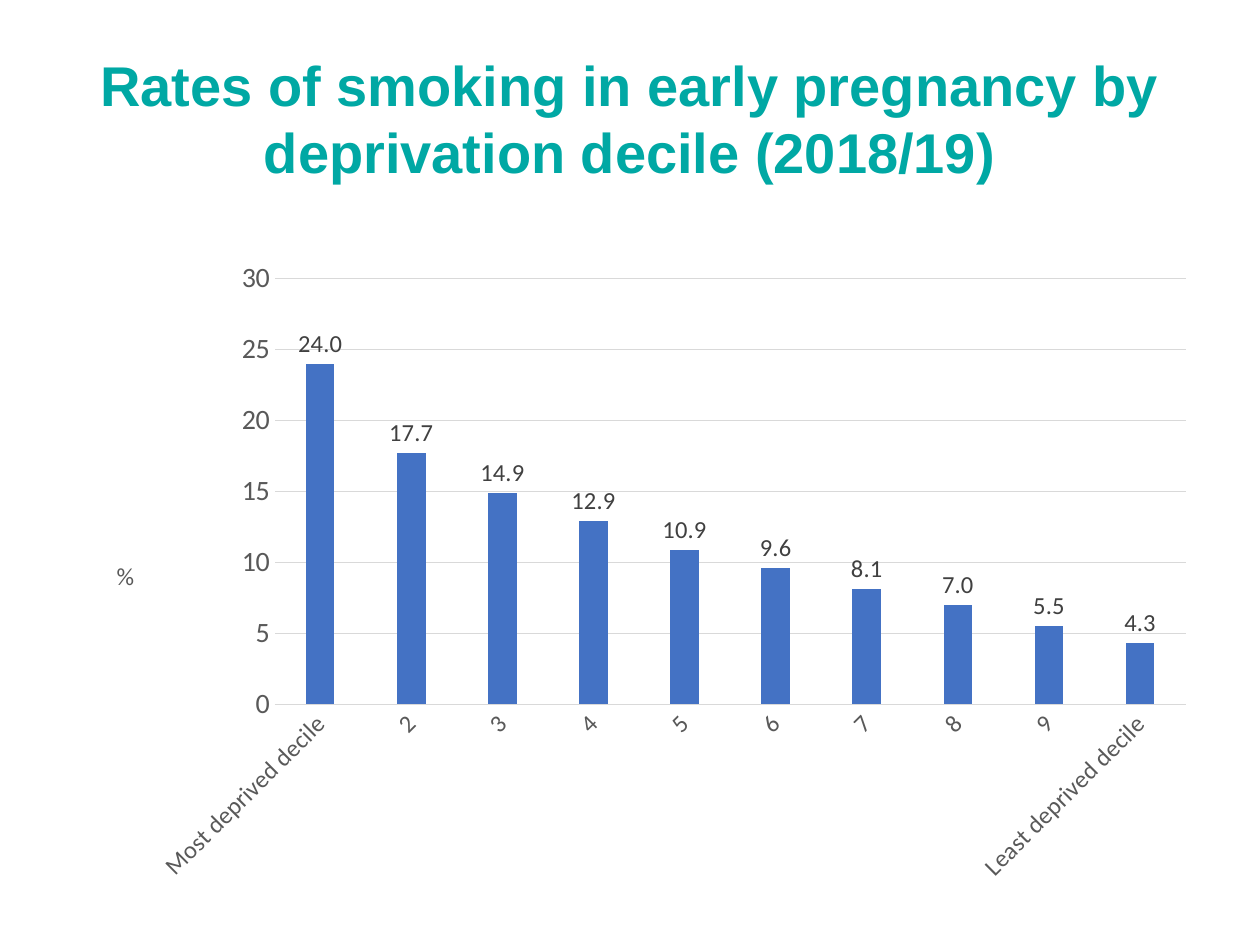
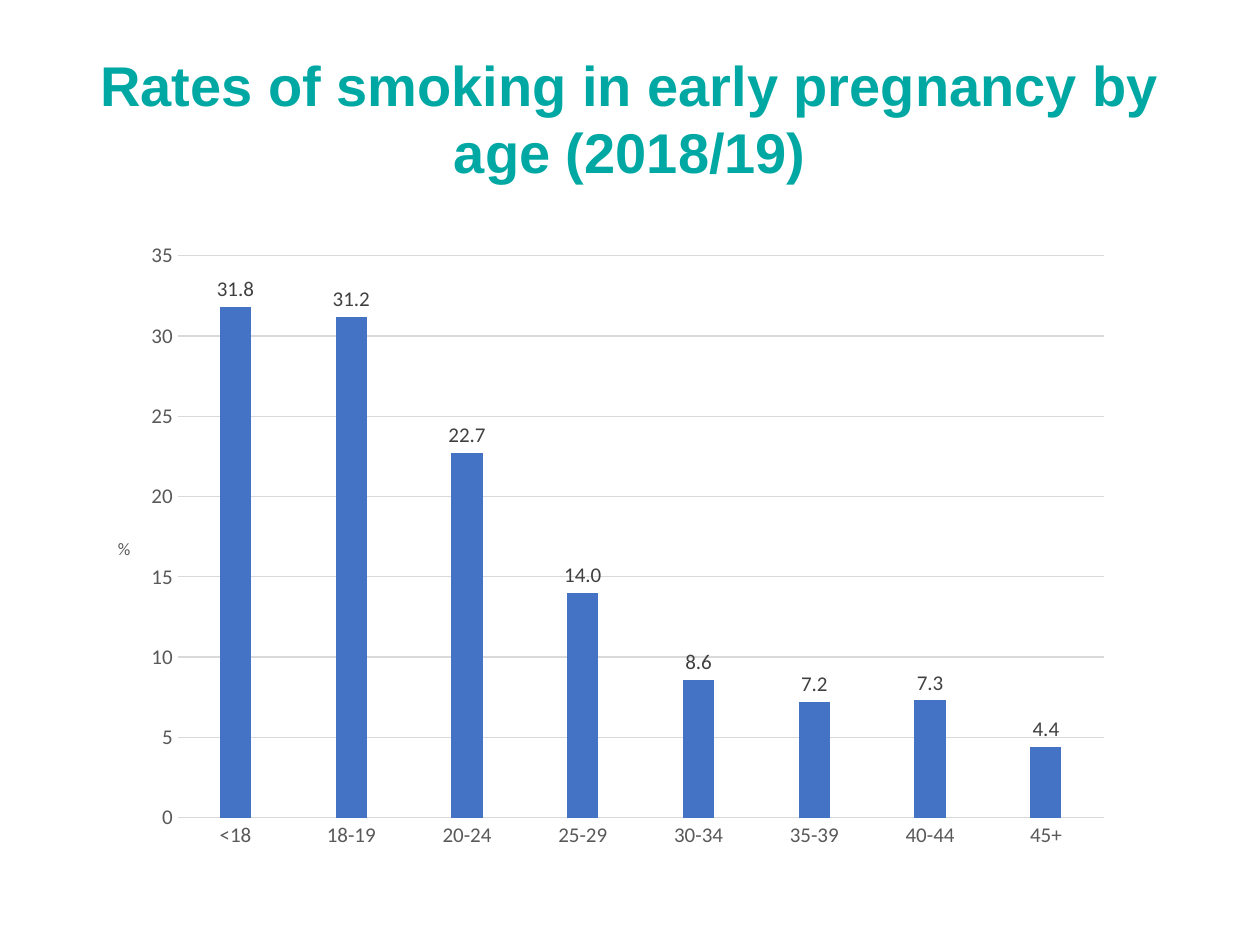
"""Build two slides showing smoking rates in early pregnancy by group."""
from lxml import etree
from pptx import Presentation
from pptx.chart.data import CategoryChartData
from pptx.dml.color import RGBColor
from pptx.enum.chart import XL_CHART_TYPE, XL_LABEL_POSITION, XL_TICK_MARK
from pptx.enum.text import MSO_ANCHOR, PP_ALIGN
from pptx.oxml.ns import qn
from pptx.util import Inches, Pt

COLUMN = XL_CHART_TYPE.COLUMN_CLUSTERED
OUTSIDE_END = XL_LABEL_POSITION.OUTSIDE_END
NO_TICK = XL_TICK_MARK.NONE
MIDDLE = MSO_ANCHOR.MIDDLE
CENTER = PP_ALIGN.CENTER

TEAL, BLUE = "00A8A4", "4472C4"
GRID, AXIS_TEXT, LABEL_TEXT, BLACK = "D9D9D9", "595959", "404040", "000000"
TITLE_FONT, CHART_FONT = "Arial", "Calibri"
TITLE_BOX = (0.49, 0.34, 9.02, 1.18)

SLIDES = [
    {
        "title": "Rates of smoking in early pregnancy by deprivation decile (2018/19)",
        "rates": [
            ("Most deprived decile", 24.0), ("2", 17.7), ("3", 14.9),
            ("4", 12.9), ("5", 10.9), ("6", 9.6), ("7", 8.1), ("8", 7.0),
            ("9", 5.5), ("Least deprived decile", 4.3),
        ],
        "chart_box": (0.69, 1.97, 8.89, 5.13),
        "plot_box": (2.18, 2.21, 7.23, 3.38),
        "unit_at": (0.89, 4.4),
        "category_size": 14, "value_size": 16, "label_size": 14, "unit_size": 14,
        "gap": 219, "maximum": 30, "category_angle": -45,
    },
    {
        "title": "Rates of smoking in early pregnancy by age (2018/19)",
        "rates": [
            ("<18", 31.8), ("18-19", 31.2), ("20-24", 22.7), ("25-29", 14.0),
            ("30-34", 8.6), ("35-39", 7.2), ("40-44", 7.3), ("45+", 4.4),
        ],
        "chart_box": (0.71, 1.83, 8.22, 5),
        "plot_box": (1.41, 2.03, 7.35, 4.46),
        "unit_at": (0.91, 4.24),
        "category_size": 12, "value_size": 12, "label_size": 12, "unit_size": 10,
        "gap": 271, "maximum": 35, "category_angle": 0,
    },
]


def color(hex_string):
    return RGBColor.from_string(hex_string)


def style_font(font, name, size, hex_string, bold=False):
    font.name, font.size, font.bold = name, Pt(size), bold
    font.color.rgb = color(hex_string)


def style_line(line):
    line.color.rgb = color(GRID)
    line.width = Pt(0.75)


def set_layout(parent, index, chart_box, box, inner=False):
    for old_layout in parent.findall(qn("c:layout")):
        parent.remove(old_layout)
    layout = etree.Element(qn("c:layout"))
    manual = etree.SubElement(layout, qn("c:manualLayout"))
    left, top, width, height = chart_box
    fractions = [(box[0] - left) / width, (box[1] - top) / height]
    fractions += [length / whole for length, whole in zip(box[2:], (width, height))]
    settings = [("layoutTarget", "inner")] if inner else []
    settings += [("xMode", "edge"), ("yMode", "edge")]
    settings += [(name, f"{part:.4f}") for name, part in zip("xywh", fractions)]
    for name, value in settings:
        etree.SubElement(manual, qn(f"c:{name}")).set("val", value)
    parent.insert(index, layout)


def add_title(slide, text):
    box = slide.shapes.add_textbox(*map(Inches, TITLE_BOX))
    text_frame = box.text_frame
    text_frame.word_wrap = True
    text_frame.vertical_anchor = MIDDLE
    text_frame.text = text
    paragraph = text_frame.paragraphs[0]
    paragraph.alignment = CENTER
    style_font(paragraph.runs[0].font, TITLE_FONT, 32, TEAL, bold=True)


def style_axes(chart, content):
    category_axis, value_axis = chart.category_axis, chart.value_axis
    for axis, size in ((category_axis, content["category_size"]),
                       (value_axis, content["value_size"])):
        axis.major_tick_mark = axis.minor_tick_mark = NO_TICK
        style_font(axis.tick_labels.font, CHART_FONT, size, AXIS_TEXT)
    style_line(category_axis.format.line)
    value_axis.format.line.fill.background()
    value_axis.minimum_scale, value_axis.maximum_scale = 0, content["maximum"]
    value_axis.major_unit = 5
    value_axis.tick_labels.number_format = "0"
    value_axis.tick_labels.number_format_is_linked = False
    style_line(value_axis.major_gridlines.format.line)
    unit_frame = value_axis.axis_title.text_frame
    unit_frame.text = "%"
    style_font(unit_frame.paragraphs[0].runs[0].font, CHART_FONT,
               content["unit_size"], AXIS_TEXT)


def add_rate_chart(slide, content):
    data = CategoryChartData(number_format="0.0")
    data.categories = [group for group, rate in content["rates"]]
    data.add_series("Series 1", [rate for group, rate in content["rates"]])
    chart_box = content["chart_box"]
    chart = slide.shapes.add_chart(COLUMN, *map(Inches, chart_box), data).chart
    chart.has_legend = chart.has_title = False
    style_font(chart.font, CHART_FONT, 10, BLACK)
    style_axes(chart, content)

    plot = chart.plots[0]
    plot.vary_by_categories = False
    plot.gap_width, plot.overlap = content["gap"], -27
    fill = plot.series[0].format.fill
    fill.solid()
    fill.fore_color.rgb = color(BLUE)
    plot.has_data_labels = True
    labels = plot.data_labels
    labels.show_value = True
    labels.position = OUTSIDE_END
    labels.number_format, labels.number_format_is_linked = "0.0", False
    style_font(labels.font, CHART_FONT, content["label_size"], LABEL_TEXT)

    chart_space = chart.element
    plot_area = chart_space.xpath("c:chart/c:plotArea")[0]
    unit_title = plot_area.xpath("c:valAx/c:title")[0]
    set_layout(plot_area, 0, chart_box, content["plot_box"], inner=True)
    set_layout(unit_title, 1, chart_box, content["unit_at"])
    angles = {"c:valAx/c:title//a:bodyPr": 0,
              "c:catAx/c:txPr/a:bodyPr": content["category_angle"]}
    for target, degrees in angles.items():
        body = plot_area.xpath(target)[0]
        body.set("rot", str(degrees * 60000))
        body.set("vert", "horz")


def main():
    presentation = Presentation()
    presentation.slide_width, presentation.slide_height = Inches(10), Inches(7.5)
    for content in SLIDES:
        slide = presentation.slides.add_slide(presentation.slide_layouts[6])
        add_title(slide, content["title"])
        add_rate_chart(slide, content)
    presentation.save("out.pptx")


if __name__ == "__main__":
    main()
